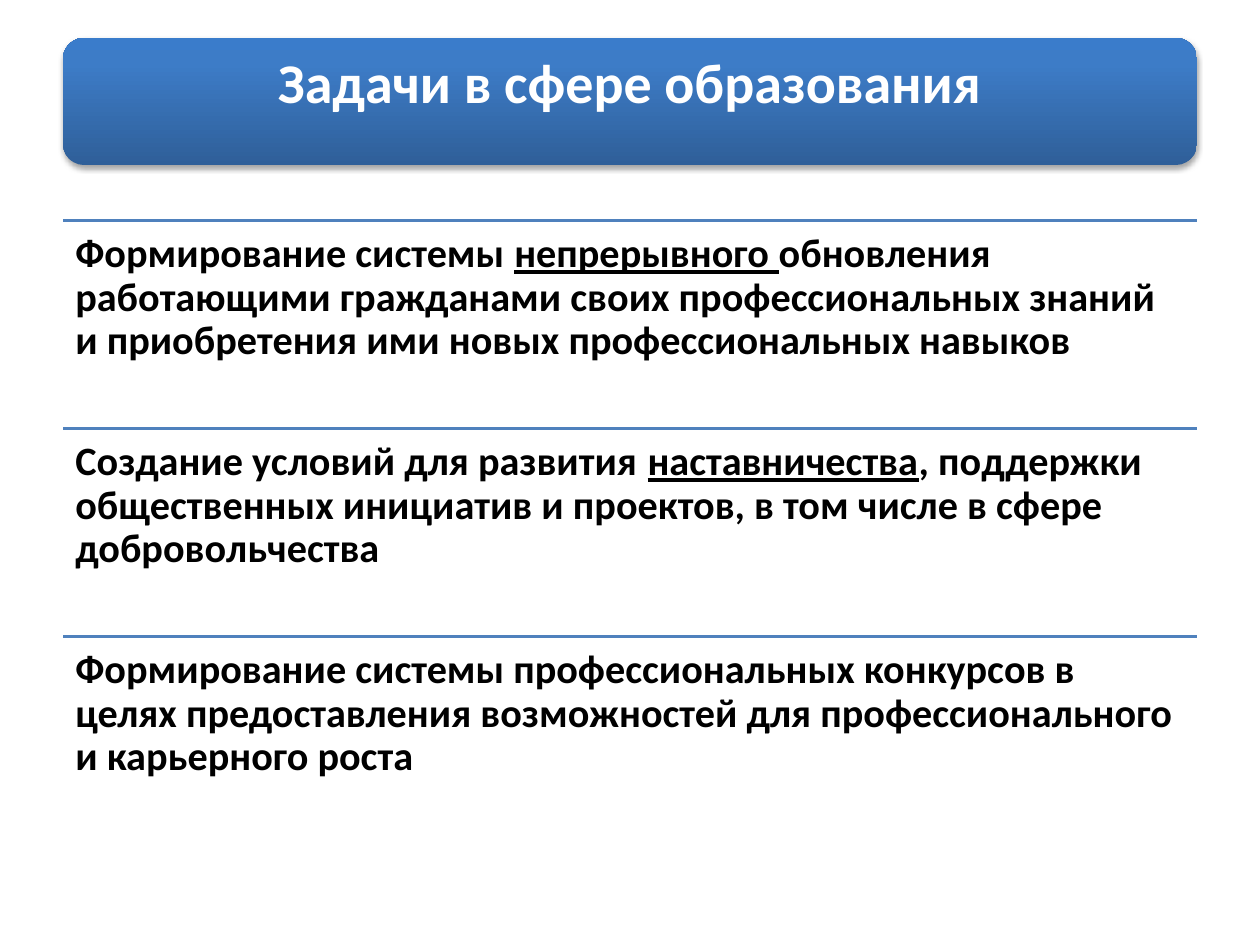
from dataclasses import dataclass

from lxml.etree import SubElement
from pptx import Presentation
from pptx.dml.color import RGBColor as RGB
from pptx.enum.shapes import MSO_CONNECTOR, MSO_SHAPE
from pptx.enum.text import MSO_ANCHOR, MSO_AUTO_SIZE, PP_ALIGN
from pptx.oxml.ns import qn
from pptx.slide import Slide
from pptx.text.text import TextFrame
from pptx.util import Inches, Pt


@dataclass(frozen=True)
class Theme:
    font: str = "Calibri"
    title_size: float = 32
    body_size: float = 23
    title_color: str = "FFFFFF"
    body_color: str = "000000"
    rule_color: str = "4F81BD"
    shadow_color: str = "000000"
    banner_stops: tuple = ((0, "2F5F99"), (80, "3D7CC7"), (100, "3A7CCB"))


@dataclass(frozen=True)
class Task:
    before: str
    underlined: str = ""
    after: str = ""


THEME = Theme()
LEFT, WIDTH = 0.5, 9
TASKS_TOP, TASK_HEIGHT = 1.75, 1.65

TASKS = (
    Task("Формирование системы ", "непрерывного ",
         "обновления работающими гражданами своих профессиональных знаний "
         "и приобретения ими новых профессиональных навыков"),
    Task("Создание условий для развития ", "наставничества",
         ", поддержки общественных инициатив и проектов, "
         "в том числе в сфере добровольчества"),
    Task("Формирование системы профессиональных конкурсов в целях "
         "предоставления возможностей для профессионального и карьерного роста"),
)


def write(tf: TextFrame, *texts: str, size: float, color: str,
          align: PP_ALIGN = PP_ALIGN.LEFT, inset: float = 0.1) -> None:
    """Fill one paragraph with bold runs; every second run is underlined."""
    tf.word_wrap = True
    tf.auto_size = MSO_AUTO_SIZE.NONE
    tf.vertical_anchor = MSO_ANCHOR.TOP
    tf.margin_left = tf.margin_right = Inches(inset)
    tf.margin_top = tf.margin_bottom = Inches(inset)
    p = tf.paragraphs[0]
    p.alignment = align
    p.line_spacing = 0.9
    for i, text in enumerate(texts):
        if not text:
            continue
        r = p.add_run()
        r.text = text
        font = r.font
        font.name, font.size, font.bold = THEME.font, Pt(size), True
        font.underline = i % 2 == 1
        font.color.rgb = RGB.from_string(color)


def add_banner(s: Slide) -> None:
    sp = s.shapes.add_shape(MSO_SHAPE.ROUNDED_RECTANGLE, Inches(LEFT), Inches(0.3),
                            Inches(WIDTH), Inches(1.01))
    sp.line.fill.background()
    sp.fill.gradient()
    sp.fill.gradient_angle = 90
    stops = sp.element.spPr.find(qn("a:gradFill")).find(qn("a:gsLst"))
    for stop in list(stops):
        stops.remove(stop)
    for percent, color in THEME.banner_stops:
        stop = SubElement(stops, qn("a:gs"), pos=str(percent * 1000))
        SubElement(stop, qn("a:srgbClr"), val=color)

    sp.shadow.inherit = False
    effects = sp.element.spPr.find(qn("a:effectLst"))
    shadow = SubElement(effects, qn("a:outerShdw"), blurRad=str(Pt(3.1)),
                        dist=str(Pt(1.8)), dir="5400000", rotWithShape="0")
    shade = SubElement(shadow, qn("a:srgbClr"), val=THEME.shadow_color)
    SubElement(shade, qn("a:alpha"), val="35000")


def place_title(s: Slide, text: str) -> None:
    title = s.shapes.title
    title.left, title.top = Inches(0.55), Inches(0.35)
    title.width, title.height = Inches(8.9), Inches(0.91)
    write(title.text_frame, text, size=THEME.title_size, color=THEME.title_color,
          align=PP_ALIGN.CENTER, inset=0.09)
    s.shapes.element.append(title.element)  # in front of the banner


def add_task(s: Slide, task: Task, top: float) -> None:
    rule = s.shapes.add_connector(MSO_CONNECTOR.STRAIGHT, Inches(LEFT), Inches(top),
                                  Inches(LEFT + WIDTH), Inches(top))
    rule.line.color.rgb = RGB.from_string(THEME.rule_color)
    rule.line.width = Pt(2)
    SubElement(rule.element.spPr, qn("a:effectLst"))
    box = s.shapes.add_textbox(Inches(LEFT), Inches(top), Inches(WIDTH), Inches(TASK_HEIGHT))
    write(box.text_frame, task.before, task.underlined, task.after,
          size=THEME.body_size, color=THEME.body_color)


def main() -> None:
    prs = Presentation()
    prs.slide_width, prs.slide_height = Inches(10), Inches(7.5)
    s = prs.slides.add_slide(prs.slide_layouts.get_by_name("Title Only"))
    add_banner(s)
    place_title(s, "Задачи в сфере образования")
    for i, task in enumerate(TASKS):
        add_task(s, task, TASKS_TOP + i * TASK_HEIGHT)
    prs.save("out.pptx")


if __name__ == "__main__":
    main()
